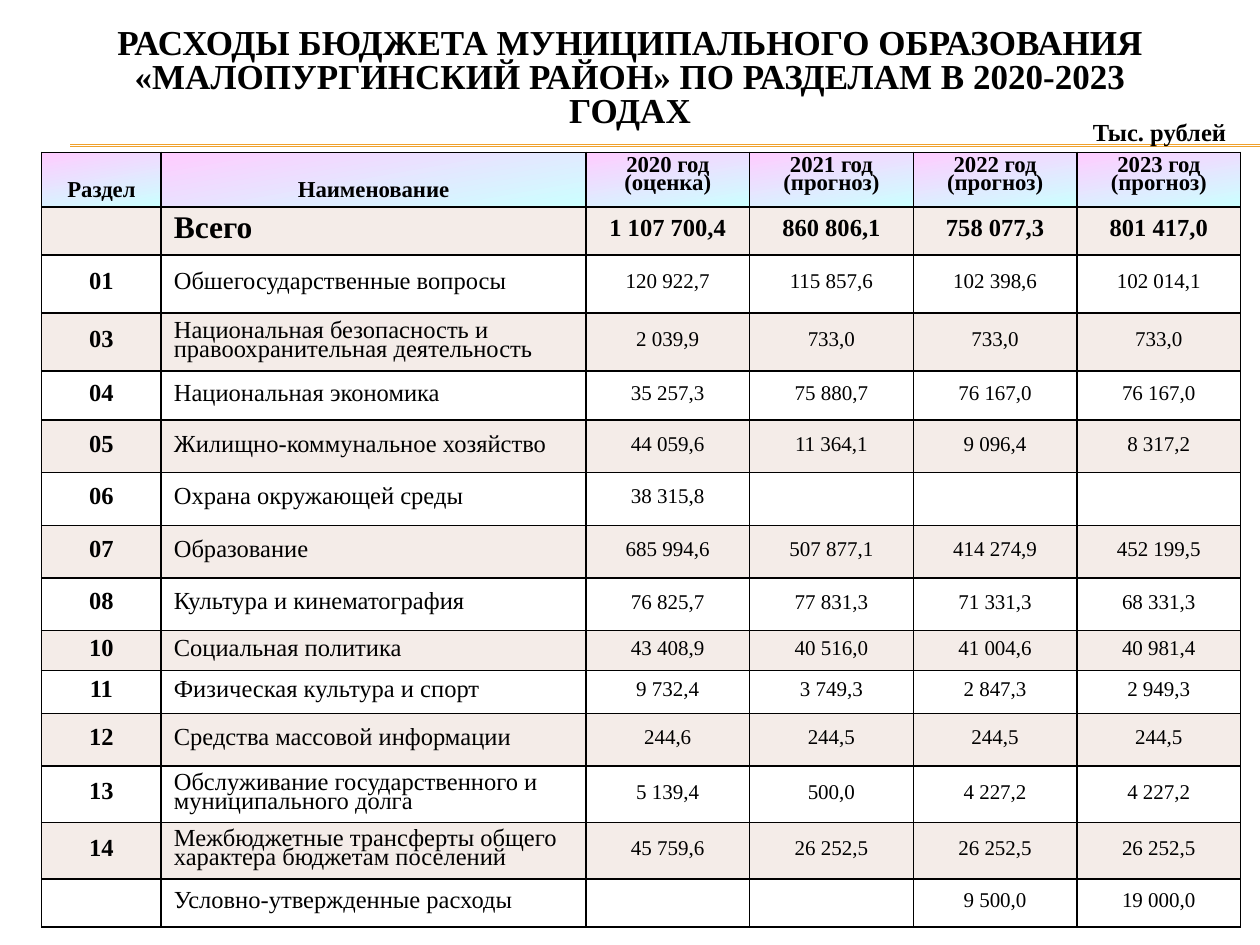
from lxml.etree import SubElement
from pptx import Presentation
from pptx.dml.color import RGBColor
from pptx.enum.shapes import MSO_CONNECTOR
from pptx.enum.text import MSO_ANCHOR as Anchor, PP_ALIGN as Align
from pptx.oxml import parse_xml
from pptx.oxml.ns import nsdecls, qn
from pptx.util import Cm, Pt

FONT = "Times New Roman"
COLORS = {
    "text": "000000", "border": "000000", "rule": "F0A22E",
    "band": "F4ECE8", "plain": "FFFFFF",
    "header_start": "FFCCFF", "header_end": "CCFFFF",
}
TITLE = ("РАСХОДЫ БЮДЖЕТА МУНИЦИПАЛЬНОГО ОБРАЗОВАНИЯ "
         "«МАЛОПУРГИНСКИЙ РАЙОН» ПО РАЗДЕЛАМ В 2020-2023 ГОДАХ")
UNITS = "Тыс. рублей"
HEADER = ("Раздел", "Наименование", "2020 год (оценка)", "2021 год (прогноз)",
          "2022 год (прогноз)", "2023 год (прогноз)")
EXPENSES = [
    ("", "Всего", "1 107 700,4", "860 806,1", "758 077,3", "801 417,0"),
    ("01", "Обшегосударственные вопросы", "120 922,7", "115 857,6", "102 398,6", "102 014,1"),
    ("03", "Национальная безопасность и правоохранительная деятельность",
     "2 039,9", "733,0", "733,0", "733,0"),
    ("04", "Национальная экономика", "35 257,3", "75 880,7", "76 167,0", "76 167,0"),
    ("05", "Жилищно-коммунальное хозяйство", "44 059,6", "11 364,1", "9 096,4", "8 317,2"),
    ("06", "Охрана окружающей среды", "38 315,8", "", "", ""),
    ("07", "Образование", "685 994,6", "507 877,1", "414 274,9", "452 199,5"),
    ("08", "Культура и кинематография", "76 825,7", "77 831,3", "71 331,3", "68 331,3"),
    ("10", "Социальная политика", "43 408,9", "40 516,0", "41 004,6", "40 981,4"),
    ("11", "Физическая культура и спорт", "9 732,4", "3 749,3", "2 847,3", "2 949,3"),
    ("12", "Средства массовой информации", "244,6", "244,5", "244,5", "244,5"),
    ("13", "Обслуживание государственного и муниципального долга",
     "5 139,4", "500,0", "4 227,2", "4 227,2"),
    ("14", "Межбюджетные трансферты общего характера бюджетам поселений",
     "45 759,6", "26 252,5", "26 252,5", "26 252,5"),
    ("", "Условно-утвержденные расходы", "", "", "9 500,0", "19 000,0"),
]
COLUMN_WIDTHS = (2.41, 8.56, 3.3, 3.3, 3.3, 3.3)
ROW_HEIGHTS = (1.1, 0.97, 1.17, 1.17, 0.99, 1.06, 1.06, 1.06, 1.06,
               0.81, 0.86, 1.06, 1.14, 1.14, 0.97)
RULE_HEIGHTS = (2.92, 2.95)


def color(name):
    return RGBColor.from_string(COLORS[name])


def format_text(text_frame, size, bold=True, align=Align.CENTER, spacing=None):
    for paragraph in text_frame.paragraphs:
        paragraph.alignment = align
        paragraph.line_spacing = spacing
        font = paragraph.font
        font.name, font.size, font.bold = FONT, Pt(size), bold
        font.color.rgb = color("text")


def add_borders(cell):
    properties = cell._tc.get_or_add_tcPr()
    for index, side in enumerate(("lnL", "lnR", "lnT", "lnB")):
        properties.insert(index, parse_xml(
            f'<a:{side} {nsdecls("a")} w="12700"><a:solidFill>'
            f'<a:srgbClr val="{COLORS["border"]}"/></a:solidFill></a:{side}>'))


def fill_cell(cell, row):
    if row:
        cell.fill.solid()
        cell.fill.fore_color.rgb = color("band" if row % 2 else "plain")
        return
    cell.fill.gradient()
    cell.fill.gradient_angle = 280
    for stop, name in zip(cell.fill.gradient_stops, ("header_start", "header_end")):
        stop.color.rgb = color(name)


def cell_font(row, column):
    if row == 0:
        return 13, True
    if row == 1:
        return (18 if column == 1 else 14), True
    return (14 if column < 2 else 12), column == 0


def add_rules(slide):
    for height in RULE_HEIGHTS:
        rule = slide.shapes.add_connector(
            MSO_CONNECTOR.STRAIGHT, Cm(1.42), Cm(height), Cm(25.4), Cm(height))
        rule.line.color.rgb = color("rule")
        rule.line.width = Pt(0.75)
        SubElement(rule._element.spPr, qn("a:effectLst"))


def add_title(slide):
    title = slide.shapes.title
    title.left, title.top, title.width, title.height = Cm(1.27), Cm(0.43), Cm(22.86), Cm(2.34)
    title.text_frame.text = TITLE
    title.text_frame.vertical_anchor = Anchor.MIDDLE
    format_text(title.text_frame, 20, spacing=0.8)


def add_expenses(slide):
    rows = [HEADER, *EXPENSES]
    table = slide.shapes.add_table(
        len(rows), len(HEADER), Cm(0.84), Cm(3.07),
        Cm(sum(COLUMN_WIDTHS)), Cm(sum(ROW_HEIGHTS))).table
    for column, width in zip(table.columns, COLUMN_WIDTHS):
        column.width = Cm(width)
    for row, height in zip(table.rows, ROW_HEIGHTS):
        row.height = Cm(height)
    for row, values in enumerate(rows):
        for column, value in enumerate(values):
            cell = table.cell(row, column)
            cell.text = value
            cell.vertical_anchor = Anchor.MIDDLE
            if row == 0:
                cell.vertical_anchor = Anchor.BOTTOM if column < 2 else Anchor.TOP
            size, bold = cell_font(row, column)
            align = Align.LEFT if row and column == 1 else Align.CENTER
            format_text(cell.text_frame, size, bold, align, 0.7)
            add_borders(cell)
            fill_cell(cell, row)


def add_units(slide):
    units = slide.shapes.add_textbox(Cm(21.16), Cm(2.24), Cm(4.01), Cm(0.86))
    units.text_frame.word_wrap = True
    units.text_frame.margin_left = Cm(0.87)
    units.text_frame.text = UNITS
    format_text(units.text_frame, 14, align=Align.LEFT)


def main():
    """Build the slide of district budget expenses by section."""
    presentation = Presentation()
    presentation.slide_width, presentation.slide_height = Cm(25.4), Cm(19.05)
    slide = presentation.slides.add_slide(presentation.slide_layouts[5])
    add_rules(slide)
    add_title(slide)
    add_expenses(slide)
    add_units(slide)
    presentation.save("out.pptx")


if __name__ == "__main__":
    main()
